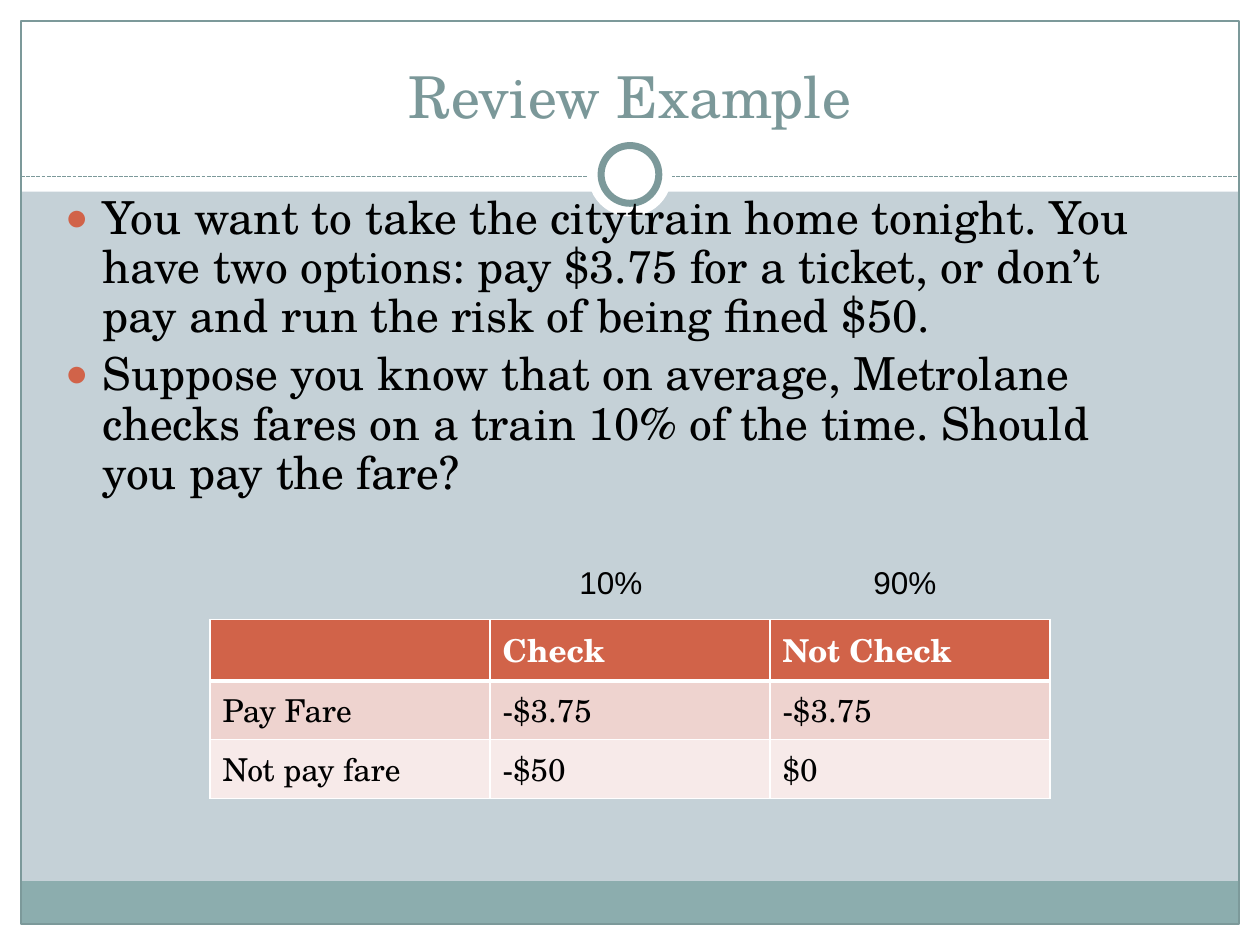
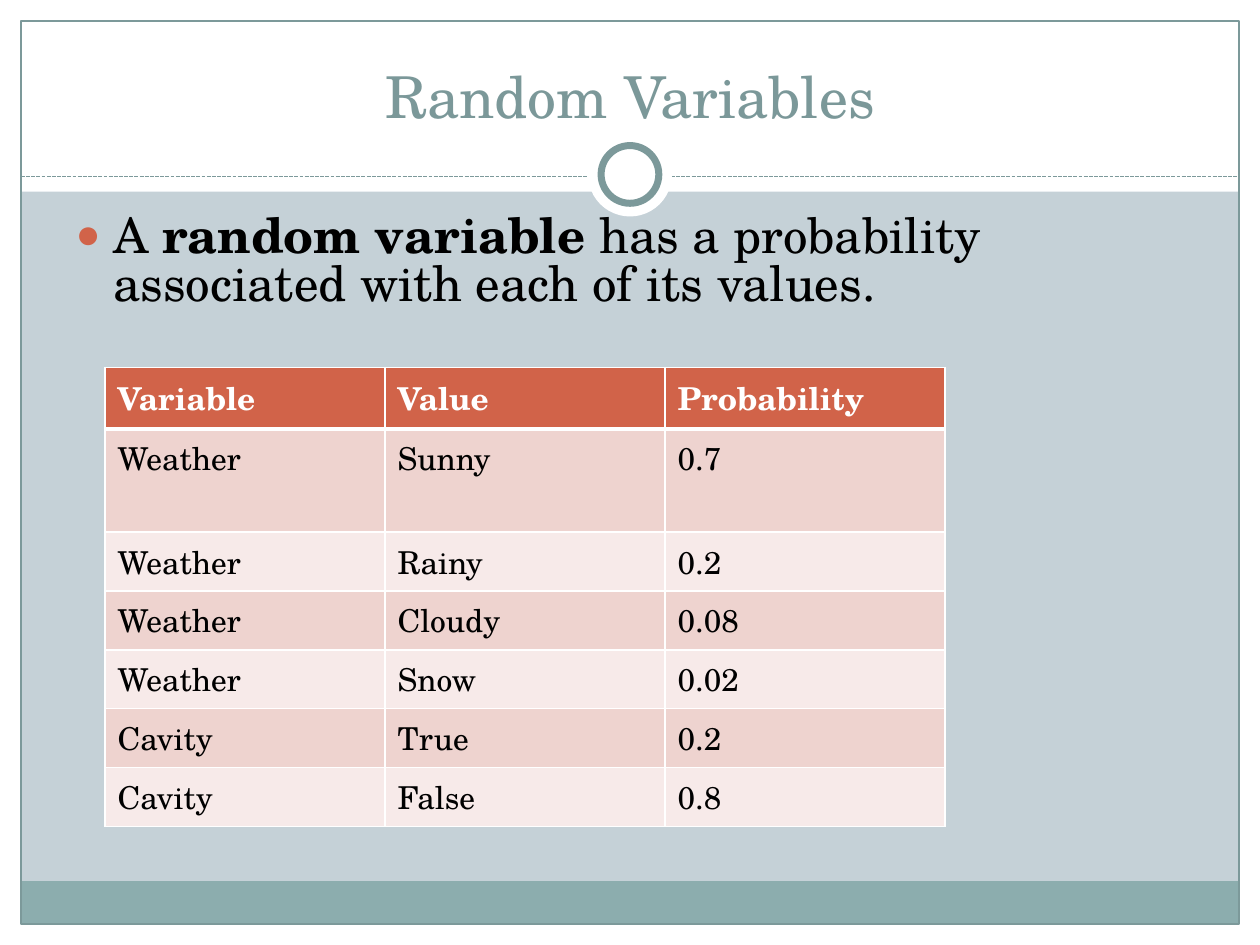
from lxml.etree import SubElement
from pptx import Presentation
from pptx.dml.color import RGBColor
from pptx.enum.dml import MSO_LINE
from pptx.enum.shapes import MSO_CONNECTOR, MSO_SHAPE
from pptx.enum.text import MSO_ANCHOR, MSO_AUTO_SIZE, PP_ALIGN
from pptx.oxml.ns import qn
from pptx.util import Pt

COLORS = {
    "background": "C5D1D7", "white": "FFFFFF", "band": "8CADAE", "frame": "7C999A",
    "title": "7B9899", "accent": "D16349", "text": "000000",
    "odd_row": "EED3CF", "even_row": "F7EAE9",
}
SERIF, SANS = "TeX Gyre Schola", "Arial"
W, H, MARGIN = 720, 540, 12
HEADER_H, RULE_Y, RING_Y = 109.5, 100.8, 99.7
COL_W, ROW_H = 160, 29.2


def rgb(name):
    return RGBColor.from_string(COLORS[name])


def set_attrs(obj, **values):
    for name, value in values.items():
        setattr(obj, name, value)


def place(shape, left, top, width, height):
    set_attrs(shape, left=Pt(left), top=Pt(top), width=Pt(width), height=Pt(height))


def add_run(p, text, size, color="text", font=SERIF, bold=False):
    r = p.add_run()
    r.text = text
    set_attrs(r.font, size=Pt(size), name=font, bold=bold)
    r.font.color.rgb = rgb(color)


def add_shape(s, box, kind=MSO_SHAPE.RECTANGLE, fill=None, line_width=0):
    sp = s.shapes.add_shape(kind, *map(Pt, box))
    sp.shadow.inherit = False
    if fill:
        sp.fill.solid()
        sp.fill.fore_color.rgb = rgb(fill)
    else:
        sp.fill.background()
    if line_width:
        sp.line.color.rgb = rgb("frame")
        sp.line.width = Pt(line_width)
    else:
        sp.line.fill.background()


def add_circle(s, diameter, line_width=0):
    box = (W - diameter) / 2, RING_Y - diameter / 2, diameter, diameter
    add_shape(s, box, MSO_SHAPE.OVAL, "white", line_width)


def add_rule(s):
    line = s.shapes.add_connector(
        MSO_CONNECTOR.STRAIGHT, Pt(MARGIN), Pt(RULE_Y), Pt(W - MARGIN), Pt(RULE_Y))
    line.line.color.rgb = rgb("frame")
    set_attrs(line.line, width=Pt(0.75), dash_style=MSO_LINE.SQUARE_DOT)
    SubElement(line.element.spPr, qn("a:effectLst"))


def add_frame(s, layout):
    """Draw the shared frame on a slide, then move it to the layout behind its placeholders."""
    placeholder_count = len(s.shapes)
    inner_w = W - 2 * MARGIN
    for box in ((0, H - MARGIN, W, MARGIN), (0, 0, W, HEADER_H),
                (0, 0, MARGIN, H), (W - MARGIN, 0, MARGIN, H)):
        add_shape(s, box, fill="white")
    add_shape(s, (MARGIN, 503.5, inner_w, 24.5), fill="band")
    add_shape(s, (MARGIN, MARGIN, inner_w, H - 2 * MARGIN), line_width=0.75)
    add_rule(s)
    add_circle(s, 48)
    add_circle(s, 33, line_width=4)
    for i, sp in enumerate(list(s.shapes)[placeholder_count:]):
        sp.element.xpath(".//p:cNvPr")[0].set("id", str(100 + i))
        layout.shapes.element.insert(2 + i, sp.element)


def set_title(s, text):
    title = s.shapes.title
    place(title, 24, 18, 672, 60)
    tf = title.text_frame
    set_attrs(tf, vertical_anchor=MSO_ANCHOR.BOTTOM, auto_size=MSO_AUTO_SIZE.NONE)
    p = tf.paragraphs[0]
    p.alignment = PP_ALIGN.CENTER
    add_run(p, text, 33, "title")


def format_bullet(p, line_spacing):
    pPr = p._p.get_or_add_pPr()
    set_attrs(p, level=0, alignment=PP_ALIGN.LEFT)
    pPr.set("marL", str(Pt(21.6)))
    pPr.set("indent", str(Pt(-21.6)))
    SubElement(SubElement(pPr, qn("a:spcBef")), qn("a:spcPct"), val="20000")
    SubElement(SubElement(pPr, qn("a:buClr")), qn("a:srgbClr"), val=COLORS["accent"])
    SubElement(pPr, qn("a:buSzPct"), val="85000")
    SubElement(pPr, qn("a:buFont"), typeface=SANS)
    SubElement(pPr, qn("a:buChar"), char="●")
    p.line_spacing = line_spacing


def set_bullets(s, box, items, size, line_spacing):
    """Each item is a list of (text, bold) runs."""
    body = s.placeholders[1]
    place(body, *box)
    tf = body.text_frame
    set_attrs(tf, auto_size=MSO_AUTO_SIZE.NONE, vertical_anchor=MSO_ANCHOR.TOP)
    for i, runs in enumerate(items):
        p = tf.add_paragraph() if i else tf.paragraphs[0]
        format_bullet(p, line_spacing)
        for text, bold in runs:
            add_run(p, text, size, bold=bold)


def add_label(s, left, width, text):
    tf = s.shapes.add_textbox(Pt(left), Pt(318), Pt(width), Pt(29)).text_frame
    tf.word_wrap = True
    add_run(tf.paragraphs[0], text, 18, font=SANS)


def set_borders(cell, top, bottom):
    tcPr = cell._tc.get_or_add_tcPr()
    for side, width in (("L", 1), ("R", 1), ("T", top), ("B", bottom)):
        ln = SubElement(tcPr, qn(f"a:ln{side}"), w=str(Pt(width)))
        SubElement(SubElement(ln, qn("a:solidFill")), qn("a:srgbClr"), val=COLORS["white"])


def add_grid(s, left, top, rows, tall_rows=None):
    """Add a table with a header row; tall_rows maps a row index to its height."""
    n = len(rows[0])
    table = s.shapes.add_table(len(rows), n, Pt(left), Pt(top),
                               Pt(n * COL_W), Pt(len(rows) * ROW_H)).table
    for col in table.columns:
        col.width = Pt(COL_W)
    for i, values in enumerate(rows):
        table.rows[i].height = Pt((tall_rows or {}).get(i, ROW_H))
        fill = "accent" if i == 0 else "odd_row" if i % 2 else "even_row"
        for j, value in enumerate(values):
            cell = table.cell(i, j)
            set_borders(cell, top=3 if i == 1 else 1, bottom=3 if i == 0 else 1)
            cell.fill.solid()
            cell.fill.fore_color.rgb = rgb(fill)
            if value:
                add_run(cell.text_frame.paragraphs[0], value, 18,
                        "text" if i else "white", bold=i == 0)


def add_review_example(s):
    set_title(s, "Review Example")
    set_bullets(s, (30, 108, 648, 198), [
        [("You want to take the citytrain home tonight. You have two options: pay $3.75 "
          "for a ticket, or don’t pay and run the risk of being fined $50.", False)],
        [("Suppose you know that on average, Metrolane checks fares on a train 10% of "
          "the time. Should you pay the fare?", False)],
    ], size=26, line_spacing=0.9)
    add_grid(s, 120, 354, [
        ("", "Check", "Not Check"),
        ("Pay Fare", "-$3.75", "-$3.75"),
        ("Not pay fare", "-$50", "$0"),
    ])
    add_label(s, 324, 66, "10%")
    add_label(s, 492, 90, "90%")


def add_random_variables(s):
    set_title(s, "Random Variables")
    set_bullets(s, (36, 120, 648, 420), [
        [("A ", False), ("random variable ", True),
         ("has a probability associated with each of its values.", False)],
    ], size=28, line_spacing=0.8)
    add_grid(s, 60, 210, [
        ("Variable", "Value", "Probability"),
        ("Weather", "Sunny", "0.7"),
        ("Weather", "Rainy", "0.2"),
        ("Weather", "Cloudy", "0.08"),
        ("Weather", "Snow", "0.02"),
        ("Cavity", "True", "0.2"),
        ("Cavity", "False", "0.8"),
    ], tall_rows={1: 59})


def main():
    prs = Presentation()
    set_attrs(prs, slide_width=Pt(W), slide_height=Pt(H))
    layout = prs.slide_layouts[1]
    layout.background.fill.solid()
    layout.background.fill.fore_color.rgb = rgb("background")
    for i, build in enumerate((add_review_example, add_random_variables)):
        s = prs.slides.add_slide(layout)
        if i == 0:
            add_frame(s, layout)
        build(s)
    prs.save("out.pptx")


if __name__ == "__main__":
    main()
